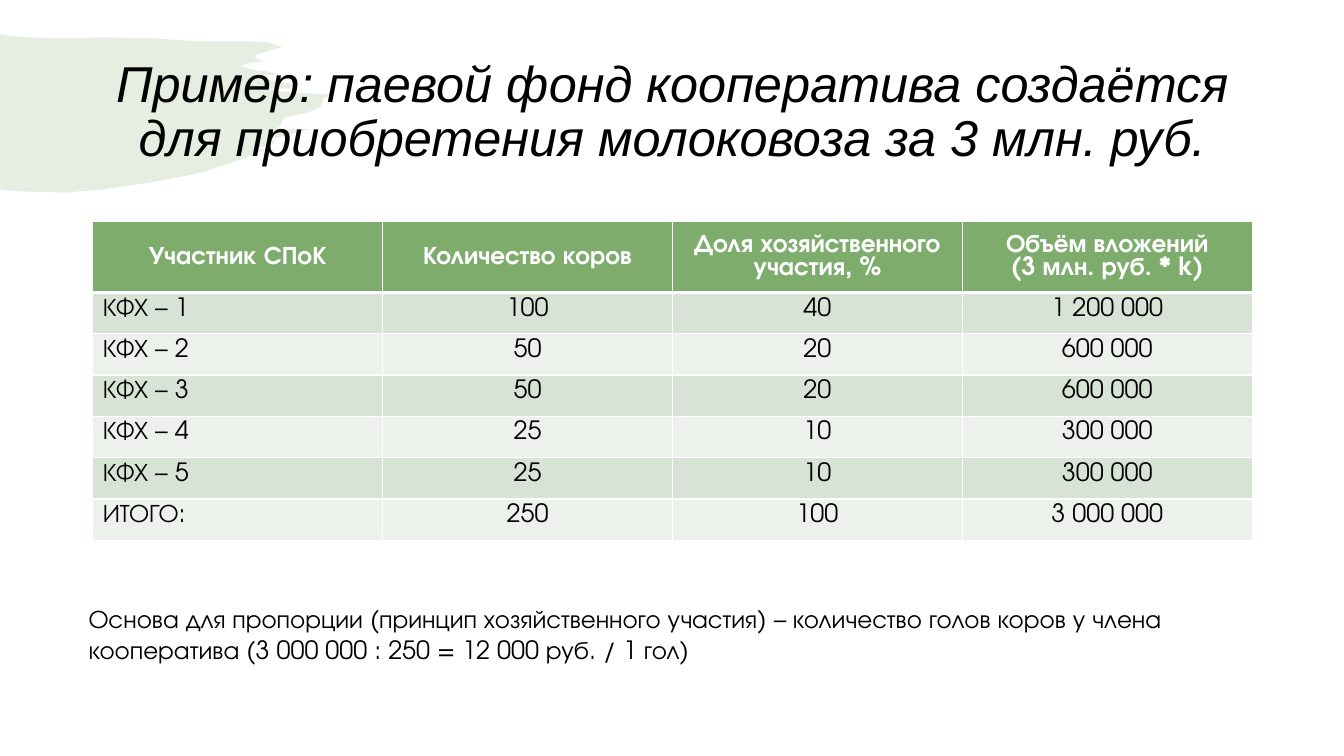
import pptx
import pptx.dml.color
import pptx.enum.text
import pptx.oxml
import pptx.oxml.ns
import pptx.util
from pptx.util import Inches

COLORS = {"green": "7DAC6C", "band_dark": "D7E3D4", "band_light": "ECF1EB",
          "white": "FFFFFF", "black": "000000"}
HEADING_FONT = "Arial"
BODY_FONT = "TeX Gyre Adventor"
ALIGN = pptx.enum.text.PP_ALIGN
ANCHOR = pptx.enum.text.MSO_ANCHOR


def color(name):
    return pptx.dml.color.RGBColor.from_string(COLORS[name])


def write(frame, text, font=BODY_FONT, size=18, ink="black", bold=False,
          italic=False, align=ALIGN.LEFT, spacing=None):
    """Fill a text frame, one paragraph for each line of text."""
    frame.word_wrap = True
    for index, line in enumerate(text.split("\n")):
        para = frame.paragraphs[0] if index == 0 else frame.add_paragraph()
        para.alignment = align
        if spacing:
            para.line_spacing = spacing
        span = para.add_run()
        span.text = line
        span.font.name = font
        span.font.size = pptx.util.Pt(size)
        span.font.bold = bold
        span.font.italic = italic
        span.font.color.rgb = color(ink)


deck = pptx.Presentation()
deck.slide_width = Inches(13.33)
deck.slide_height = Inches(7.5)
page = deck.slides.add_slide(deck.slide_layouts[6])

# Translucent brush stroke
stroke_points = [
    (0, 0.34), (0.06, 0.35), (0.25, 0.37), (0.66, 0.38), (1.02, 0.37),
    (1.51, 0.38), (1.94, 0.41), (2.48, 0.41), (2.66, 0.42), (2.8, 0.47),
    (2.71, 0.49), (2.55, 0.54), (2.53, 0.57), (2.56, 0.59), (2.62, 0.62),
    (2.48, 0.62), (2.38, 0.66), (2.46, 0.68), (2.56, 0.7), (2.66, 0.71),
    (2.75, 0.74), (2.51, 0.75), (2.63, 0.78), (2.73, 0.81), (2.8, 0.82),
    (2.88, 0.83), (2.9, 0.85), (2.87, 0.88), (2.84, 0.88), (2.63, 0.88),
    (2.8, 0.91), (3.3, 0.94), (3.21, 0.97), (3.18, 1.06), (3.07, 1.11),
    (3, 1.13), (2.83, 1.16), (2.8, 1.2), (2.78, 1.25), (2.74, 1.28),
    (3.08, 1.28), (2.69, 1.38), (2.73, 1.42), (2.52, 1.48), (2.63, 1.48),
    (2.4, 1.58), (1.97, 1.72), (1.5, 1.81), (1.02, 1.88), (0.65, 1.91),
    (0.23, 1.9), (0.07, 1.89), (0, 1.88)]
points = [(Inches(x), Inches(y)) for x, y in stroke_points]
builder = page.shapes.build_freeform(*points[0])
builder.add_line_segments(points[1:], close=True)
stroke = builder.convert_to_shape()
stroke.shadow.inherit = False
stroke.line.fill.background()
stroke.fill.solid()
stroke.fill.fore_color.rgb = color("green")
fill_color = stroke.fill._xPr.find(".//" + pptx.oxml.ns.qn("a:srgbClr"))
fill_color.append(pptx.oxml.parse_xml(
    f'<a:alpha {pptx.oxml.ns.nsdecls("a")} val="20000"/>'))

title = page.shapes.add_textbox(Inches(0.92), Inches(0.4), Inches(11.5), Inches(1.45))
title.text_frame.vertical_anchor = ANCHOR.MIDDLE
write(title.text_frame,
      "Пример: паевой фонд кооператива создаётся для приобретения молоковоза за 3 млн. руб.",
      font=HEADING_FONT, size=36, italic=True, align=ALIGN.CENTER, spacing=0.9)

rows = [
    ("Участник СПоК", "Количество коров", "Доля хозяйственного участия, %",
     "Объём вложений\n(3 млн. руб. * k)"),
    ("КФХ – 1", "100", "40", "1 200 000"),
    ("КФХ – 2", "50", "20", "600 000"),
    ("КФХ – 3", "50", "20", "600 000"),
    ("КФХ – 4", "25", "10", "300 000"),
    ("КФХ – 5", "25", "10", "300 000"),
    ("ИТОГО:", "250", "100", "3 000 000"),
]
table = page.shapes.add_table(len(rows), len(rows[0]), Inches(0.92), Inches(2.2),
                              Inches(11.5), Inches(0.41 * len(rows))).table
for r, row in enumerate(rows):
    header = r == 0
    table.rows[r].height = Inches(0.41)
    for c, text in enumerate(row):
        cell = table.cell(r, c)
        cell.vertical_anchor = ANCHOR.MIDDLE if header else ANCHOR.TOP
        write(cell.text_frame, text, bold=header, ink="white" if header else "black",
              align=ALIGN.CENTER if header or c else ALIGN.LEFT)
        props = cell._tc.get_or_add_tcPr()
        for side in "LRTB":
            width = pptx.util.Pt(3 if header and side == "B" else 1)
            props.append(pptx.oxml.parse_xml(
                f'<a:ln{side} {pptx.oxml.ns.nsdecls("a")} w="{width}"><a:solidFill>'
                f'<a:srgbClr val="{COLORS["white"]}"/></a:solidFill></a:ln{side}>'))
        cell.fill.solid()
        cell.fill.fore_color.rgb = color(
            "green" if header else "band_dark" if r % 2 else "band_light")

note = page.shapes.add_textbox(Inches(0.78), Inches(5.94), Inches(11.5), Inches(0.71))
write(note.text_frame,
      "Основа для пропорции (принцип хозяйственного участия) – количество голов коров "
      "у члена кооператива (3 000 000 : 250 = 12 000 руб. / 1 гол)")

deck.save("out.pptx")
